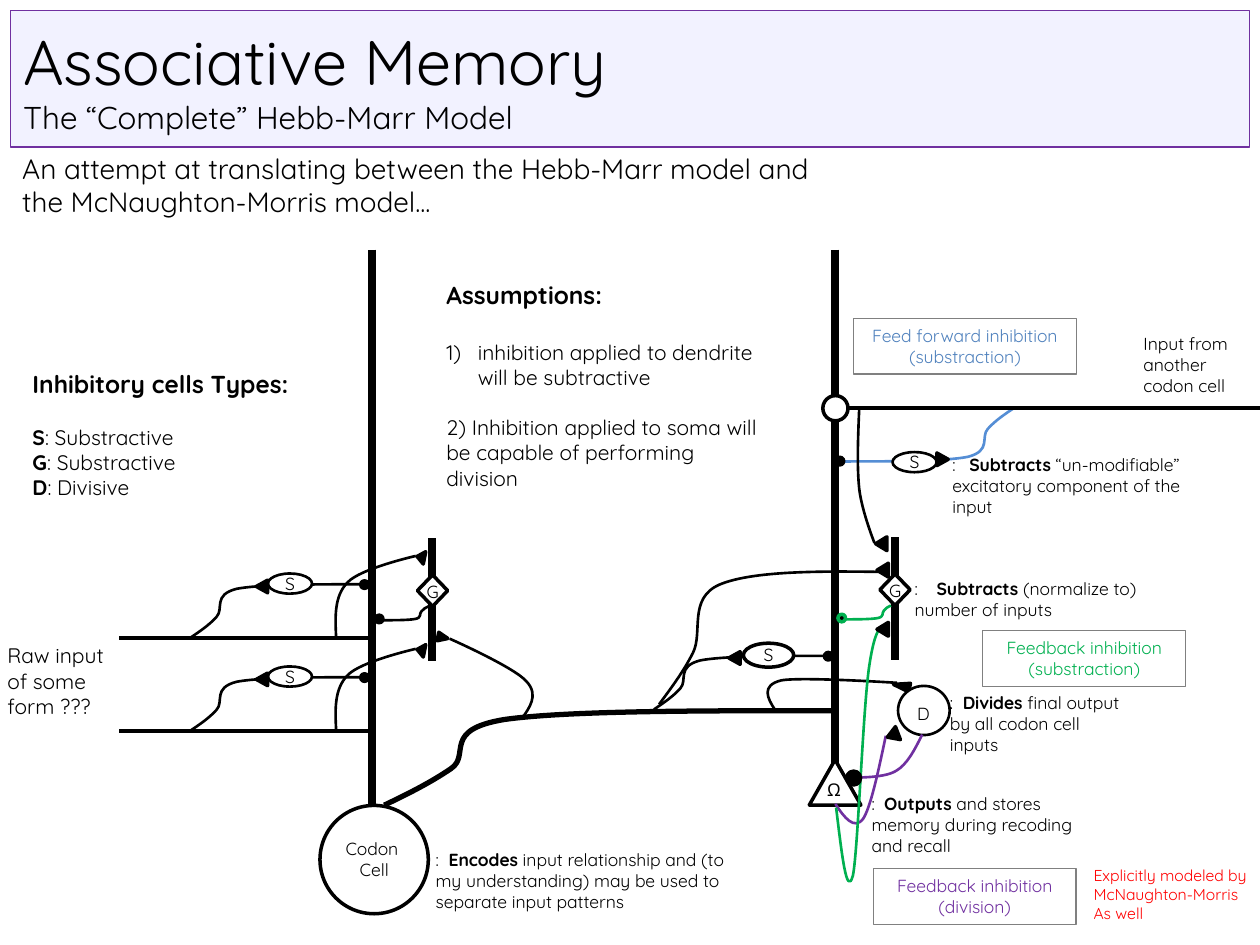
from lxml import etree
from pptx import Presentation
from pptx import util as u
from pptx.dml.color import RGBColor
from pptx.enum import shapes, text
from pptx.oxml import ns

FONT = "Quicksand"
BLACK, WHITE, GREY = "000000", "FFFFFF", "808080"
BLUE, GREEN, PURPLE, RED = "558ED5", "00B050", "7030A0", "FF0000"
KIND = shapes.MSO_SHAPE
ALIGN = text.PP_ALIGN


def colour(value):
    """Turn a hex string into a colour."""
    return RGBColor.from_string(value)


def child(parent, tag, **attributes):
    """Append a drawing element with the given attributes."""
    return etree.SubElement(parent, ns.qn(tag), **attributes)


def paint(shape, fill, line, weight):
    """Set the fill and outline of a shape and take away its shadow."""
    shape.shadow.inherit = False
    if fill:
        shape.fill.solid()
        shape.fill.fore_color.rgb = colour(fill)
    else:
        shape.fill.background()
    shape.line.color.rgb = colour(line)
    shape.line.width = u.Pt(weight)


def style(span, size, tint, bold=False):
    """Format one run."""
    span.font.name = FONT
    span.font.size = u.Pt(size)
    span.font.bold = bold
    span.font.color.rgb = colour(tint)


def write(box, lines, size, tint, align=ALIGN.LEFT):
    """Write paragraphs in a shape; words between asterisks are bold."""
    frame = box.text_frame
    frame.word_wrap = True
    frame.auto_size = text.MSO_AUTO_SIZE.SHAPE_TO_FIT_TEXT
    frame.vertical_anchor = text.MSO_ANCHOR.TOP
    frame.text = "\n".join(lines)
    for para, line in zip(frame.paragraphs, lines):
        para.text = ""
        para.alignment = align
        for number, words in enumerate(line.split("*")):
            if words:
                span = para.add_run()
                span.text = words
                style(span, size, tint, number % 2 == 1)
    return frame.paragraphs


def bezier(points, steps=16):
    """Sample a chain of cubic curves to find its extent."""
    result = [points[0]]
    for first in range(0, len(points) - 3, 3):
        corners = points[first:first + 4]
        for step in range(1, steps + 1):
            t = step / steps
            weights = ((1 - t) ** 3, 3 * t * (1 - t) ** 2, 3 * t * t * (1 - t), t ** 3)
            result.append(tuple(sum(w * c[axis] for w, c in zip(weights, corners))
                                for axis in (0, 1)))
    return result


class Region:
    """A part of the page with its own origin, measured in points."""

    def __init__(self, page, left, top):
        """Remember the page and the origin."""
        self.page, self.left, self.top = page, left, top

    def place(self, x, y):
        """Turn a local position into a page position."""
        return u.Pt(self.left + x), u.Pt(self.top + y)

    def inner(self, x, y):
        """Open a region inside this one."""
        return Region(self.page, self.left + x, self.top + y)

    def line(self, start, end, weight):
        """Draw a straight black line."""
        line = self.page.shapes.add_connector(
            shapes.MSO_CONNECTOR.STRAIGHT, *self.place(*start), *self.place(*end))
        line.line.color.rgb = colour(BLACK)
        line.line.width = u.Pt(weight)
        child(line._element.spPr, "a:effectLst")

    def curve(self, points, tint=BLACK, weight=1.5):
        """Draw an open chain of cubic curves inside its true extent."""
        first, *rest = [self.place(*point) for point in bezier(points)]
        builder = self.page.shapes.build_freeform(*first, scale=1.0)
        builder.add_line_segments(rest, close=False)
        shape = builder.convert_to_shape()
        outline = shape._element.spPr.find(".//" + ns.qn("a:path"))
        for segment in list(outline):
            outline.remove(segment)
        spots = [self.place(*point) for point in points]
        groups = [spots[:1]] + [spots[at:at + 3] for at in range(1, len(spots), 3)]
        for group in groups:
            segment = child(outline, "a:moveTo" if len(group) == 1 else "a:cubicBezTo")
            for x, y in group:
                child(segment, "a:pt", x=str(x - shape.left), y=str(y - shape.top))
        paint(shape, None, tint, weight)

    def mark(self, kind, x, y, width, height, fill=WHITE, line=BLACK, weight=2, turn=0):
        """Draw a preset shape around a centre."""
        shape = self.page.shapes.add_shape(
            kind, *self.place(x - width / 2, y - height / 2), u.Pt(width), u.Pt(height))
        paint(shape, fill, line, weight)
        shape.rotation = turn

    def tip(self, x, y, turn=270, width=7.9, height=6.5):
        """Draw a black synapse triangle."""
        self.mark(KIND.ISOSCELES_TRIANGLE, x, y, width, height, BLACK, turn=turn)

    def dot(self, x, y, size=4.3, line=BLACK):
        """Draw a black synapse dot."""
        self.mark(KIND.OVAL, x, y, size, size, BLACK, line)

    def note(self, x, y, width, height, lines, size=10, tint=BLACK, align=ALIGN.LEFT, tab=None):
        """Place a text box, with an optional tab stop."""
        box = self.page.shapes.add_textbox(*self.place(x, y), u.Pt(width), u.Pt(height))
        paras = write(box, lines, size, tint, align)
        if tab:
            stops = child(paras[0]._p.get_or_add_pPr(), "a:tabLst")
            child(stops, "a:tab", pos=str(u.Pt(tab)), algn="l")
        return paras

    def letter(self, x, y, name):
        """Centre a cell name on a point."""
        self.note(x - 11.15, y - 9.7, 22.3, 19.4, [name], align=ALIGN.CENTER)

    def tag(self, x, y, width, lines, tint):
        """Place a framed caption."""
        box = self.page.shapes.add_shape(
            KIND.RECTANGLE, *self.place(x, y), u.Pt(width), u.Pt(31.7))
        paint(box, WHITE, GREY, 0.75)
        write(box, lines, 10, tint, ALIGN.CENTER)


def s_cell(area, sign=1, tint=BLACK, soma=(57, 25.2, 11.5, 1.5), arrow=41):
    """Draw a subtractive S cell from its input; sign -1 turns it half round."""
    path = [(0, 0), (5.4, -3.6), (10.8, -7.2), (15.1, -12), (19.4, -16.6), (12.7, -24.5),
            (26.6, -28), (40.5, -30.6), (70.6, -30.6), (100.8, -30.6)]
    x, width, height, weight = soma
    area.curve([(sign * a, sign * b) for a, b in path], tint)
    area.mark(KIND.OVAL, sign * x, sign * -31, width, height, weight=weight)
    area.dot(sign * 99.6, sign * -30.4)
    area.tip(sign * arrow, sign * -29.4, 180 + sign * 90, 7.2)
    area.letter(sign * x, sign * -31, "S")


def g_cell(area, tint=BLACK):
    """Draw a G cell with its bar and its inhibiting branch."""
    area.line((30.4, 0), (30.4, 70), 4.5)
    area.mark(KIND.DIAMOND, 30.5, 29.9, 17.3, 18)
    area.letter(30.5, 30.6, "G")
    area.curve([(28.1, 38.9), (26.6, 39.6), (25.2, 40.3), (24.1, 41.8), (22.7, 43.2),
                (24.5, 45.4), (20.5, 46.1), (16.6, 46.8), (8.3, 46.8), (0, 46.8)], tint)
    area.dot(0, 46.1, line=tint)


def raw_input(area):
    """Draw one raw input fibre with its S cell and its branch to the G cell."""
    area.line((144.4, 0), (-0.3, 0), 2.25)
    s_cell(area.inner(40.3, 0))
    area.curve([(123.8, 0.7), (123.1, -11.5), (122.4, -23.8), (130.3, -31.7),
                (137.5, -39.6), (169.2, -46.8), (169.2, -46.8)])
    area.tip(172.1, -46.1, 281.2, 7.2, 4.3)


def codon_side(area):
    """Draw the codon cell, its inputs and its axon."""
    area.line((32.8, 0.6), (32.8, 374.2), 4.5)
    area.mark(KIND.OVAL, 33.8, 349.2, 61.9, 61.9)
    area.note(5.4, 333.2, 56.9, 31.7, ["Codon ", "Cell"], align=ALIGN.CENTER)
    area.note(61.9, 339.7, 180, 43.9, [
        ":\t*Encodes* input relationship and (to my understanding) may be used to "
        "separate input patterns"], tab=7.4)
    area.curve([(39.6, 318.1), (53.3, 311.6), (66.2, 305.1), (77.8, 297.2), (89.3, 289.3),
                (72, 274.9), (108.7, 269.1), (144.7, 264.1), (220.3, 264.1),
                (295.9, 264.1)], weight=3)
    area.curve([(118, 269), (122.4, 262.6), (128.2, 255.4), (121, 247.5), (114.5, 239.6),
                (77, 223), (77, 223)])
    area.tip(73.1, 222.3, 101.2, 5, 5.8)
    g_cell(area.inner(36.7, 165.6))
    for height in (222.5, 275.6):
        raw_input(area.inner(-111.6, height))


def output_side(area):
    """Draw the output cell with its inhibitory circuits."""
    s_cell(area.inner(209.6, 93.1), -1, BLUE)
    area.line((350, 93.3), (100.2, 93.3), 2.25)
    area.line((107.4, 2.6), (107.4, 320.1), 4.5)
    area.mark(KIND.OVAL, 107.4, 93.3, 14.4, 14.4)
    area.curve([(121, 93.3), (120.3, 109.8), (119.6, 126.4), (121, 139.4),
                (122.5, 152.3), (129.7, 170.3), (129.7, 170.3)])
    g_cell(area.inner(111, 167.1), GREEN)
    s_cell(area.inner(3.7, 265.4), soma=(65.5, 28.8, 13.7, 2), arrow=46)
    area.curve([(6.6, 262.5), (13, 253.8), (20.2, 244.5), (26, 233), (31.8, 221.4),
                (23.1, 202), (41.1, 194.1), (59.8, 186.2), (98, 186.2), (136.9, 186.9)])
    area.curve([(72.8, 265.4), (68.5, 258.9), (64.9, 251.7), (76.4, 248.8),
                (87.9, 246.6), (142.6, 250.2), (142.6, 250.2)])
    area.tip(145.2, 252, 281.2, 5, 9.4)
    area.mark(KIND.OVAL, 157.9, 266, 29.5, 28.1, weight=1.5)
    area.letter(157.7, 267.9, "D")
    area.mark(KIND.ISOSCELES_TRIANGLE, 107.2, 307.1, 29.5, 25.9)
    area.letter(106.6, 311.1, "Ω")
    area.curve([(107.4, 319.4), (112.4, 327.3), (118.2, 334.5), (123.2, 328),
                (127.5, 321.5), (131.8, 301.4), (136.2, 280.5)], PURPLE)
    area.curve([(157, 279.8), (152.7, 288.4), (148.4, 297), (141.9, 300.6),
                (134.7, 305), (116, 304.2), (116, 304.2)], PURPLE)
    area.curve([(107.8, 321.5), (111, 347.4), (113.8, 373.4), (117.4, 360.4), (120.3, 346.7),
                (123.2, 263.2), (126.8, 240.2), (130.4, 216.4), (134, 217.1),
                (138.3, 217.8)], GREEN)
    for x, y, turn in ((133.6, 170.7, 270), (134.4, 185.8, 270), (134.4, 219.6, 270),
                       (140.1, 280.1, 249)):
        area.tip(x, y, turn)
    area.dot(117.8, 304.6, 7.9)


def output_notes(area):
    """Write the explanations beside the output cell."""
    for x, y, width, height, tab, words in (
            (167.1, 115.6, 165.6, 43.9, 9.7,
             "*Subtracts* “un-modifiable” excitatory component of the input"),
            (145.5, 186.9, 169.2, 31.7, 12.6, "*Subtracts *(normalize to) number of inputs"),
            (165.7, 251.7, 115.2, 43.9, 7.4, "*Divides* final output by all codon cell inputs"),
            (121, 309.5, 129.6, 43.9, 7.2,
             "*Outputs* and stores memory during recoding and recall")):
        area.note(x, y, width, height, [":\t" + words], tab=tab)
    area.note(276.3, 46.5, 73.4, 43.9, ["Input from another codon cell"])
    area.note(247.8, 351, 110.9, 40.3,
              ["Explicitly modeled by McNaughton-Morris", "As well"], 9, RED)
    area.tag(117.7, 42, 127.4, ["Feed forward inhibition", "(substraction)"], "4F81BD")
    area.tag(191.6, 220.5, 115.9, ["Feedback inhibition", "(substraction)"], GREEN)
    area.tag(129, 356.5, 115.9, ["Feedback inhibition", "(division)"], PURPLE)


def legends(area):
    """Write the introduction, the assumptions and the cell types."""
    area.note(5.6, 0, 481.7, 46.1, ["An attempt at translating between the Hebb-Marr model "
                                    "and the McNaughton-Morris model..."], 16)
    area.note(-2.9, 281, 73.4, 51.1, ["Raw input of some form ???"], 12)
    assumptions = area.note(248, 73.7, 194.4, 128.2, [
        "*Assumptions:*", "inhibition applied to dendrite will be subtractive",
        "2) Inhibition applied to soma will be capable of performing division"], 12)
    types = area.note(11.5, 124.6, 194.4, 82.1, [
        "*Inhibitory cells Types:*", "*S*: Substractive", "*G*: Substractive",
        "*D*: Divisive"], 12)
    for paras, gap in ((assumptions, 17.3), (types, 14.6)):
        paras[0].runs[0].font.size = u.Pt(14)
        paras[1].space_before = u.Pt(gap)
    assumptions[2].space_before = u.Pt(14)
    numbered = assumptions[1]._p.get_or_add_pPr()
    numbered.set("marL", str(u.Pt(18)))
    numbered.set("indent", str(u.Pt(-18)))
    child(numbered, "a:buAutoNum", type="arabicParenR")


def heading(page, left, top, width, height):
    """Format the title placeholder as a tinted banner."""
    title = page.shapes.title
    title.left, title.top, title.width, title.height = map(u.Pt, (left, top, width, height))
    paint(title, "CCCCFF", PURPLE, 0.75)
    shade = title._element.spPr.find(".//" + ns.qn("a:srgbClr"))
    child(shade, "a:alpha", val="25000")
    frame = title.text_frame
    frame.text = "Associative Memory\vThe “Complete” Hebb-Marr Model"
    frame.vertical_anchor = text.MSO_ANCHOR.MIDDLE
    frame.auto_size = text.MSO_AUTO_SIZE.NONE
    para = frame.paragraphs[0]
    para.alignment = ALIGN.LEFT
    for span, size in zip(para.runs, (36, 18)):
        style(span, size, BLACK)


def main():
    """Build and save the deck."""
    deck = Presentation()
    deck.slide_width, deck.slide_height = u.Pt(720), u.Pt(540)
    page = deck.slides.add_slide(deck.slide_layouts[5])
    heading(page, 6, 6, 708, 78)
    codon_side(Region(page, 180, 142))
    output_side(Region(page, 370, 140))
    output_notes(Region(page, 370, 140))
    legends(Region(page, 0, 82.8))
    deck.save("out.pptx")


if __name__ == "__main__":
    main()
